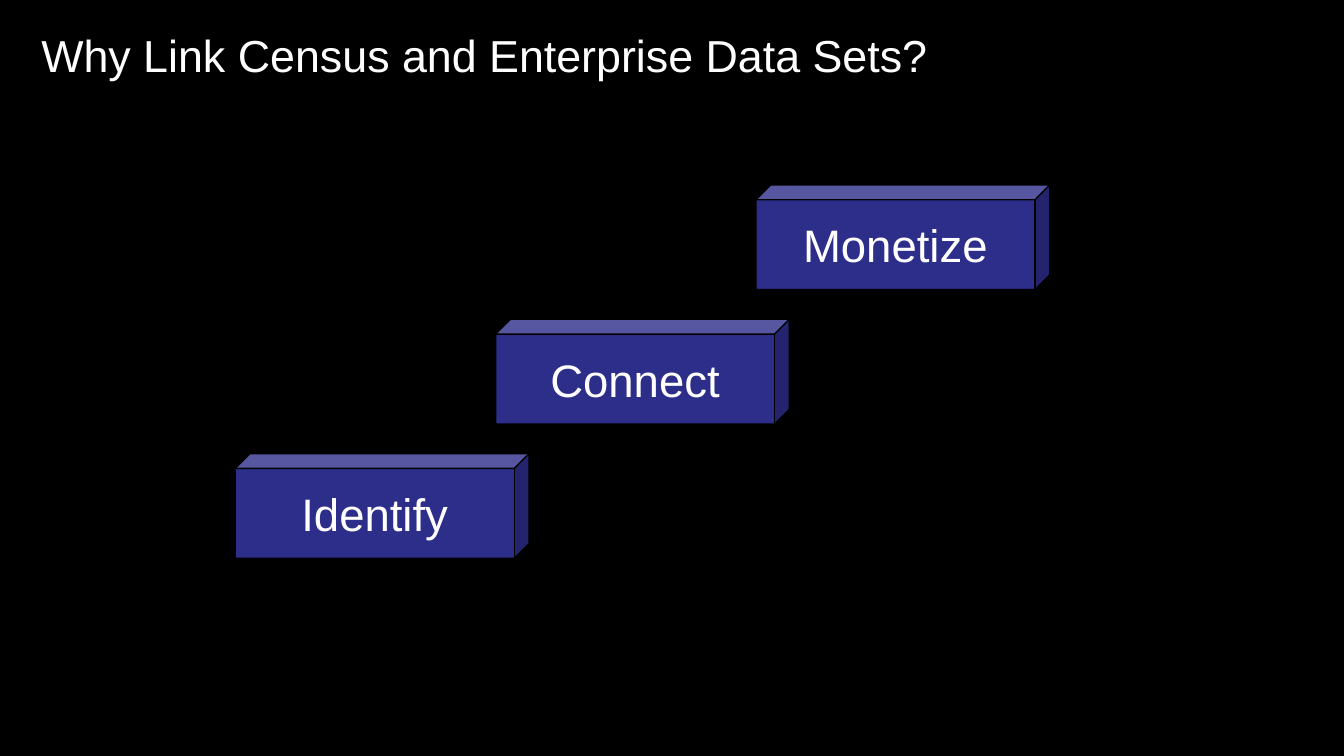
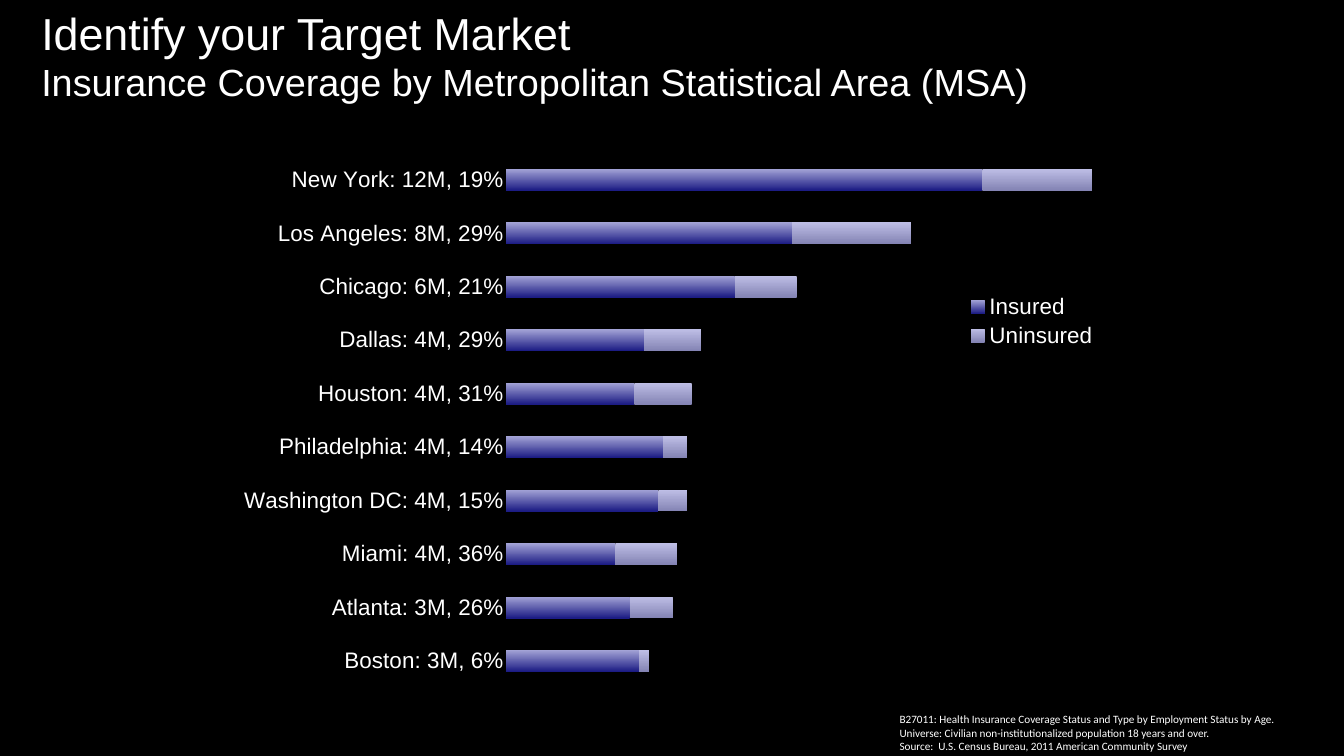
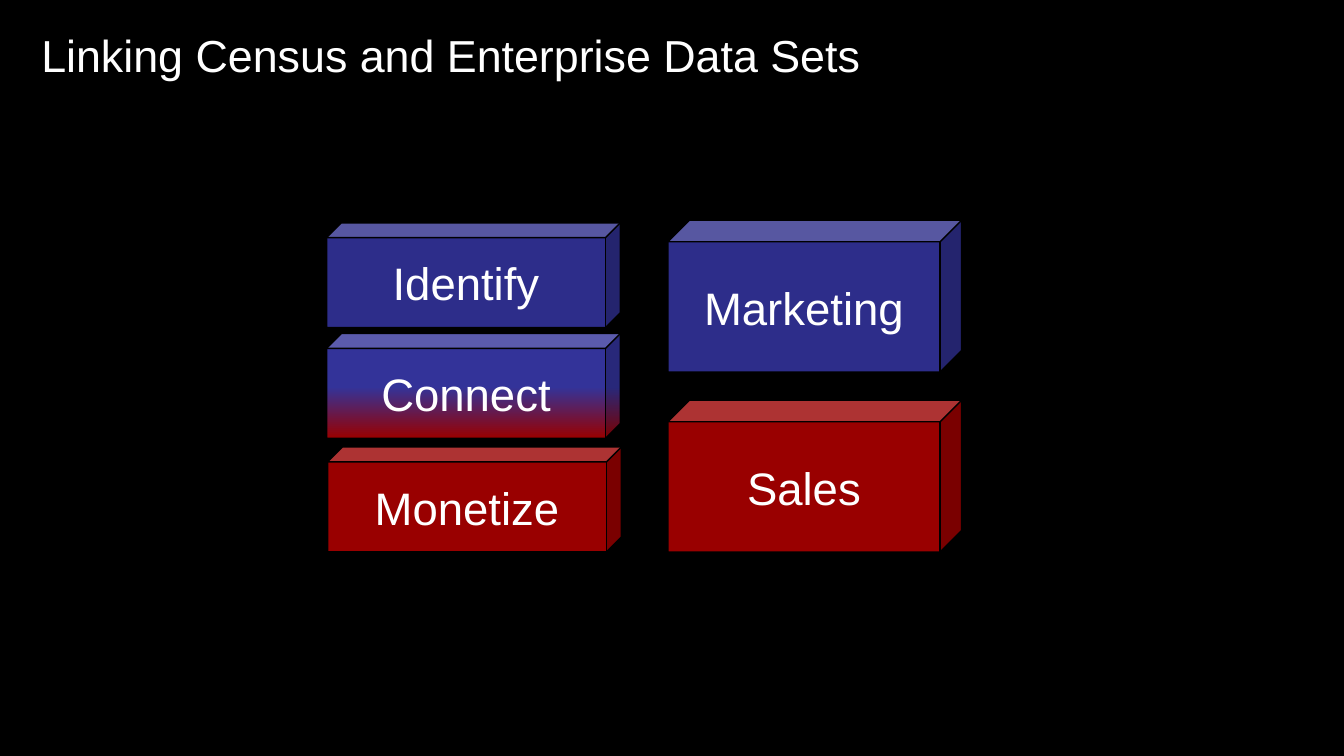
"""Build three slides on linking census and enterprise data sets."""
import pptx
import pptx.chart.data
import pptx.dml.color
import pptx.enum.chart
import pptx.enum.shapes
import pptx.enum.text
import pptx.oxml
import pptx.oxml.ns
import pptx.util

Cm, Pt = pptx.util.Cm, pptx.util.Pt
WHITE, BLACK, NAVY, INDIGO, RED = "FFFFFF", "000000", "2D2D8A", "333399", "990000"


def paint(fill, *colors, start=0):
    """Fill with one colour, or with a vertical gradient of two."""
    rgb = [pptx.dml.color.RGBColor.from_string(c) for c in colors]
    if len(rgb) == 1:
        fill.solid()
        fill.fore_color.rgb = rgb[0]
        return
    fill.gradient()
    fill.gradient_angle = 270
    for stop, color, position in zip(fill.gradient_stops, rgb, (start, 1)):
        stop.color.rgb = color
        stop.position = position


def style(font, size, name="Arial"):
    """Give a font its size and name, in white."""
    for key, value in {"size": Pt(size), "name": name, "bold": False}.items():
        setattr(font, key, value)
    paint(font.fill, WHITE)


prs = pptx.Presentation()
prs.slide_width, prs.slide_height = Cm(67.74), Cm(38.1)
paint(prs.slide_master.background.fill, BLACK)

titles = [
    ["Why Link Census and Enterprise Data Sets?"],
    ["Identify your Target Market ",
     "Insurance Coverage by Metropolitan Statistical Area (MSA)"],
    ["Linking Census and Enterprise Data Sets"],
]
for lines in titles:
    s = prs.slides.add_slide(prs.slide_layouts[5])
    sp = s.shapes.title
    sp.left, sp.top, sp.width, sp.height = Cm(1.93), Cm(0.46), Cm(63.86), Cm(4.6)
    tf = sp.text_frame
    frame = {"word_wrap": True, "auto_size": pptx.enum.text.MSO_AUTO_SIZE.NONE,
             "vertical_anchor": pptx.enum.text.MSO_ANCHOR.MIDDLE}
    frame.update({f"margin_{side}": Cm(0.15) for side in ("left", "top", "right", "bottom")})
    for key, value in frame.items():
        setattr(tf, key, value)
    p = tf.paragraphs[0]
    p.alignment = pptx.enum.text.PP_ALIGN.LEFT
    for i, (line, size) in enumerate(zip(lines, (64, 54))):
        if i:
            p.add_line_break()
        r = p.add_run()
        r.text = line
        style(r.font, size)
why, market, linking = prs.slides

STEP_H, TEAM_H = 5.28, 7.65
cubes = [(why, name, 11.86 + 13.12 * i, 22.86 - 6.77 * i, STEP_H, [NAVY])
         for i, name in enumerate(["Identify", "Connect", "Monetize"])]
cubes += [
    (linking, "Monetize", 16.51, 22.53, STEP_H, [RED]),
    (linking, "Connect", 16.46, 16.81, STEP_H, [INDIGO, RED]),
    (linking, "Identify", 16.46, 11.23, STEP_H, [NAVY]),
    (linking, "Sales", 33.66, 20.17, TEAM_H, [RED]),
    (linking, "Marketing", 33.66, 11.1, TEAM_H, [NAVY]),
]
for s, name, x, y, height, colors in cubes:
    sp = s.shapes.add_shape(pptx.enum.shapes.MSO_SHAPE.CUBE,
                            Cm(x), Cm(y), Cm(14.81), Cm(height))
    sp.adjustments[0] = 0.142
    sp.shadow.inherit = False
    paint(sp.fill, *colors, start=0.51)
    paint(sp.line.fill, BLACK)
    sp.line.width = Pt(2)
    tf = sp.text_frame
    tf.vertical_anchor = pptx.enum.text.MSO_ANCHOR.MIDDLE
    p = tf.paragraphs[0]
    p.alignment = pptx.enum.text.PP_ALIGN.CENTER
    r = p.add_run()
    r.text = name
    style(r.font, 65)

coverage = [
    ("New York: 12M, 19%", 100, 23),
    ("Los Angeles: 8M, 29%", 60, 25),
    ("Chicago: 6M, 21%", 48, 13),
    ("Dallas: 4M, 29%", 29, 12),
    ("Houston: 4M, 31%", 27, 12),
    ("Philadelphia: 4M, 14%", 33, 5),
    ("Washington DC: 4M, 15%", 32, 6),
    ("Miami: 4M, 36%", 23, 13),
    ("Atlanta: 3M, 26%", 26, 9),
    ("Boston: 3M, 6%", 28, 2),
]
areas, insured, uninsured = zip(*coverage)
data = pptx.chart.data.CategoryChartData()
data.categories = areas
data.add_series("Insured", insured)
data.add_series("Uninsured", uninsured)
chart = market.shapes.add_chart(pptx.enum.chart.XL_CHART_TYPE.BAR_STACKED,
                                Cm(8.69), Cm(5.59), Cm(52.5), Cm(30.28), data).chart
style(chart.font, 32)
chart.has_title = False
chart.has_legend = True
chart.legend.position = pptx.enum.chart.XL_LEGEND_POSITION.RIGHT
chart.legend.include_in_layout = False
style(chart.legend.font, 32)

plot = chart.plots[0]
for key, value in {"gap_width": 150, "overlap": 100, "vary_by_categories": False}.items():
    setattr(plot, key, value)
for series, colors in zip(plot.series, [("A3A3D6", "1C1C84"), ("BEBEE6", "8484B4")]):
    paint(series.format.fill, *colors)

axis = chart.category_axis
axis.reverse_order = True
axis.major_tick_mark = pptx.enum.chart.XL_TICK_MARK.NONE
axis.format.line.fill.background()
style(axis.tick_labels.font, 32)
values = {"visible": False, "has_major_gridlines": False,
          "minimum_scale": 0, "maximum_scale": 142}
for key, value in values.items():
    setattr(chart.value_axis, key, value)

plot_area = chart._chartSpace.chart.plotArea
legend = chart.legend._element
layouts = [(plot_area, "inner", (0.32, 0.07, 0.65, 0.89)),
           (legend, None, (0.76, 0.3, 0.13, 0.1))]
for el, target, box in layouts:
    for old in el.findall(pptx.oxml.ns.qn("c:layout")):
        el.remove(old)
    marks = f'<c:layoutTarget val="{target}"/>' if target else ""
    marks += "".join(f'<c:{k}Mode val="edge"/>' for k in "xy")
    marks += "".join(f'<c:{k} val="{v}"/>' for k, v in zip("xywh", box))
    layout = pptx.oxml.parse_xml(
        f'<c:layout {pptx.oxml.ns.nsdecls("c")}><c:manualLayout>{marks}'
        "</c:manualLayout></c:layout>")
    el.insert(0 if target else 1, layout)

tf = market.shapes.add_textbox(Cm(45.09), Cm(35.79), Cm(22.86), Cm(2.31)).text_frame
tf.word_wrap = True
notes = [
    "B27011: Health Insurance Coverage Status and Type by Employment Status by Age.",
    "Universe: Civilian non-institutionalized population 18 years and over.",
    "Source:  U.S. Census Bureau, 2011 American Community Survey",
]
for i, note in enumerate(notes):
    p = tf.add_paragraph() if i else tf.paragraphs[0]
    r = p.add_run()
    r.text = note
    style(r.font, 16, "Calibri")

prs.save("out.pptx")
